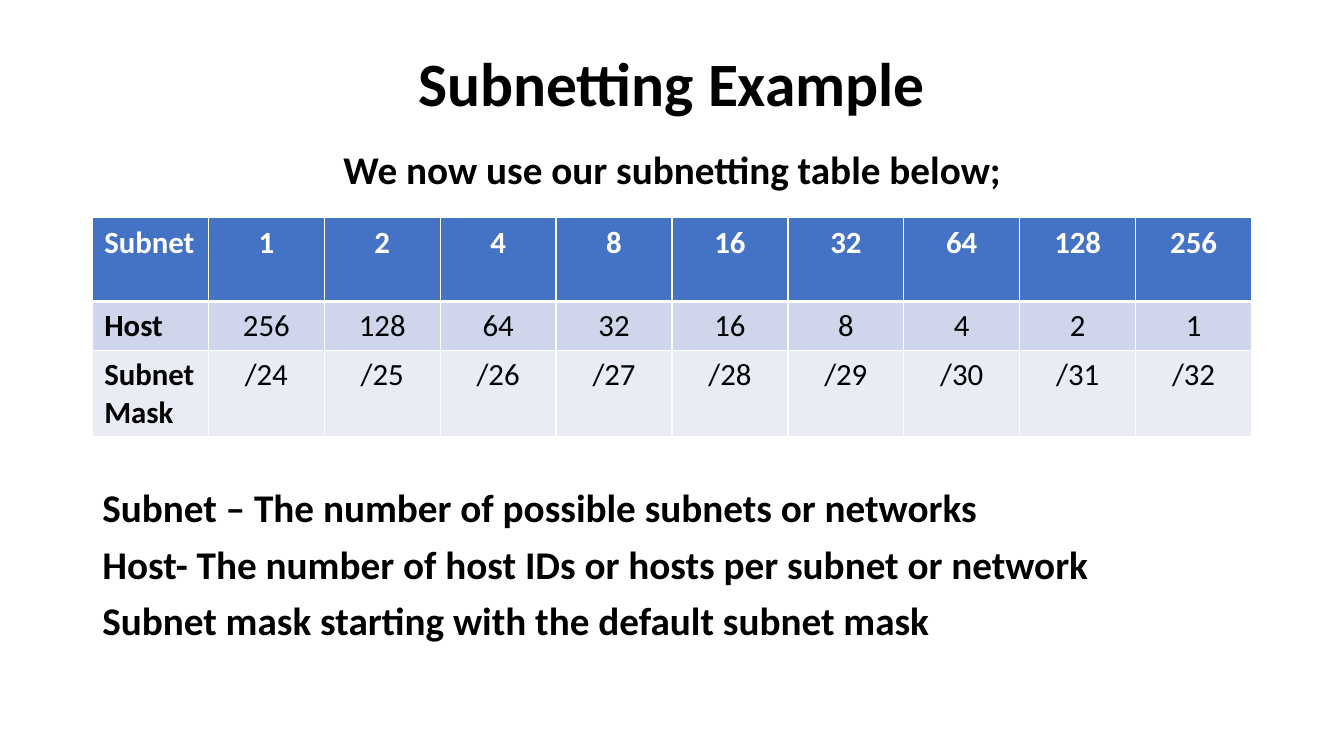
from dataclasses import dataclass

from lxml import etree
from pptx import Presentation
from pptx import util as u
from pptx.dml import color
from pptx.enum import text
from pptx.oxml import ns

COLORS = {
    "ink": "000000",
    "paper": "FFFFFF",
    "header": "4472C4",
    "host": "CFD5EA",
    "mask": "E9EBF5",
}
FONT = "Calibri"
LEFT, WIDTH = u.Cm(2.33), u.Cm(29.21)
SPLITS = range(9)


@dataclass
class Passage:
    top: float
    height: float
    size: int
    lines: list[str]
    align: text.PP_ALIGN = text.PP_ALIGN.CENTER
    anchor: text.MSO_ANCHOR = text.MSO_ANCHOR.TOP
    space_before: int = 0


@dataclass
class SubnetRow:
    label: str
    values: list[str]
    height: float
    fill: str
    ink: str = "ink"
    bold_values: bool = False
    top_border: int = 1
    bottom_border: int = 1


PASSAGES = [
    Passage(1.02, 2.34, 44, ["Subnetting Example"], anchor=text.MSO_ANCHOR.MIDDLE),
    Passage(3.68, 1.5, 28, ["We now use our subnetting table below;"], space_before=10),
    Passage(
        12.2, 4.95, 28,
        [
            "Subnet – The number of possible subnets or networks",
            "Host- The number of host IDs or hosts per subnet or network",
            "Subnet mask starting with the default subnet mask",
        ],
        align=text.PP_ALIGN.JUSTIFY,
        space_before=10,
    ),
]

SUBNET_ROWS = [
    SubnetRow("Subnet", [str(2**n) for n in SPLITS], 2.11, "header", "paper", True,
              bottom_border=3),
    SubnetRow("Host", [str(2**(8 - n)) for n in SPLITS], 1.22, "host", top_border=3),
    SubnetRow("Subnet Mask", [f"/{24 + n}" for n in SPLITS], 2.18, "mask"),
]


def rgb(name: str) -> color.RGBColor:
    return color.RGBColor.from_string(COLORS[name])


def add_run(paragraph, words: str, size: int, ink: str, bold: bool) -> None:
    run = paragraph.add_run()
    run.text = words
    run.font.name = FONT
    run.font.size = u.Pt(size)
    run.font.bold = bold
    run.font.color.rgb = rgb(ink)


def add_passage(slide, passage: Passage) -> None:
    box = slide.shapes.add_textbox(LEFT, u.Cm(passage.top), WIDTH, u.Cm(passage.height))
    frame = box.text_frame
    frame.word_wrap = True
    frame.vertical_anchor = passage.anchor
    for index, line in enumerate(passage.lines):
        paragraph = frame.add_paragraph() if index else frame.paragraphs[0]
        paragraph.alignment = passage.align
        paragraph.line_spacing = 0.9
        paragraph.space_before = u.Pt(passage.space_before)
        add_run(paragraph, line, passage.size, "ink", True)


def add_borders(cell, row: SubnetRow) -> None:
    properties = cell._tc.get_or_add_tcPr()
    widths = {"L": 1, "R": 1, "T": row.top_border, "B": row.bottom_border}
    for side, points in widths.items():
        line = etree.SubElement(properties, ns.qn(f"a:ln{side}"), w=str(u.Pt(points)))
        fill = etree.SubElement(line, ns.qn("a:solidFill"))
        etree.SubElement(fill, ns.qn("a:srgbClr"), val=COLORS["paper"])


def fill_cell(cell, row: SubnetRow, words: str, is_label: bool) -> None:
    add_borders(cell, row)
    cell.fill.solid()
    cell.fill.fore_color.rgb = rgb(row.fill)
    cell.margin_left = cell.margin_right = u.Cm(0.3)
    cell.margin_top = cell.margin_bottom = u.Cm(0.15)
    paragraph = cell.text_frame.paragraphs[0]
    paragraph.alignment = text.PP_ALIGN.LEFT if is_label else text.PP_ALIGN.CENTER
    add_run(paragraph, words, 22, row.ink, is_label or row.bold_values)


def add_subnet_table(slide, rows: list[SubnetRow]) -> None:
    height = u.Cm(sum(row.height for row in rows))
    table = slide.shapes.add_table(
        len(rows), len(SPLITS) + 1, LEFT, u.Cm(5.49), WIDTH, height
    ).table
    for row_index, row in enumerate(rows):
        table.rows[row_index].height = u.Cm(row.height)
        for column, words in enumerate([row.label, *row.values]):
            fill_cell(table.cell(row_index, column), row, words, column == 0)


def main() -> None:
    deck = Presentation()
    deck.slide_width, deck.slide_height = u.Cm(33.87), u.Cm(19.05)
    slide = deck.slides.add_slide(deck.slide_layouts[6])
    for passage in PASSAGES:
        add_passage(slide, passage)
    add_subnet_table(slide, SUBNET_ROWS)
    deck.save("out.pptx")


if __name__ == "__main__":
    main()
